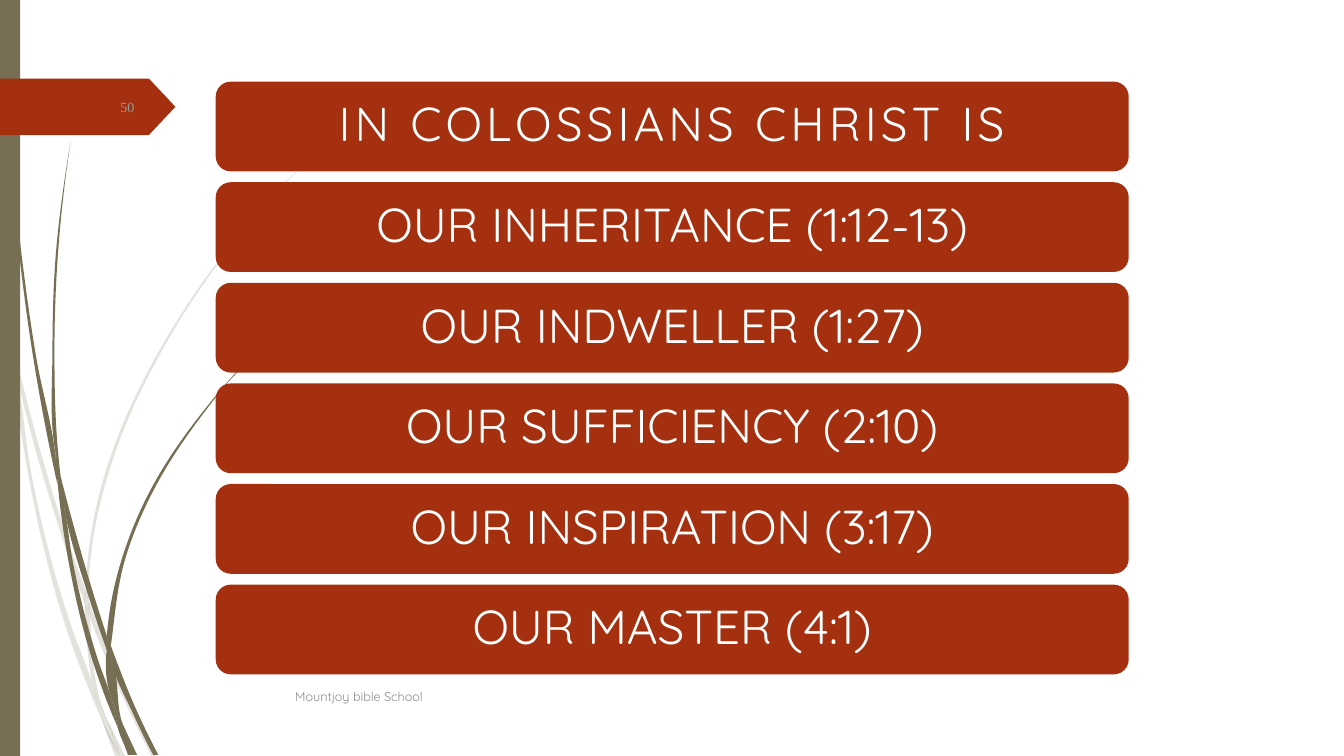
from dataclasses import dataclass

from lxml import etree
from pptx import Presentation
from pptx.dml.color import RGBColor
from pptx.enum.shapes import MSO_SHAPE as Preset
from pptx.enum.text import MSO_ANCHOR as Anchor, PP_ALIGN as Align
from pptx.oxml.ns import qn
from pptx.shapes.autoshape import Shape
from pptx.slide import Slide
from pptx.util import Inches, Pt

# Grid: 1333 columns by 750 rows of square cells
CELL = Inches(0.01)
COLUMNS, ROWS = 1333, 750

OLIVE = RGBColor(0x76, 0x6F, 0x54)
RUST = RGBColor(0xA5, 0x30, 0x10)
WHITE = RGBColor(0xFF, 0xFF, 0xFF)
FOOTER_GREY = RGBColor(0x8C, 0x8C, 0x8C)
NUMBER_GREY = RGBColor(0x9B, 0x9A, 0x98)

Point = tuple[float, float]  # column, row
Box = tuple[float, float, float, float]  # column, row, columns wide, rows high


@dataclass(frozen=True)
class Blade:
    """A piece of grass between two edges, each listed from top to bottom."""
    left: list[Point]
    right: list[Point]


@dataclass(frozen=True)
class Caption:
    text: str
    box: Box
    size: float
    color: RGBColor
    font: str = "Quicksand"
    align: Align = Align.LEFT
    spacing: float = 0
    line_spacing: float = 1


# Grass
PALE_BLADES = [
    Blade([(0, 299), (11, 350)], [(0, 282), (9, 322), (11, 350)]),
    Blade([(17, 376), (36, 449), (58, 522), (84, 599)],
          [(14, 345), (36, 433), (62, 520), (85, 586)]),
    Blade([(88, 610), (123, 694), (150, 750)],
          [(88, 596), (92, 607), (127, 692), (155, 750)]),
    Blade([(105, 711), (119, 750)], [(105, 711), (124, 750)]),
    Blade([(11, 350), (28, 470), (44, 546), (65, 621), (92, 693), (101, 714)],
          [(11, 350), (17, 376), (31, 469), (48, 545), (70, 619), (93, 683),
           (99, 707), (101, 714)]),
    Blade([(84, 599), (87, 646), (93, 683), (96, 692), (105, 711)],
          [(84, 599), (88, 610), (91, 646), (103, 706), (105, 711)]),
    Blade([(312, 153), (289, 175), (268, 197), (228, 244), (158, 348), (107, 461),
           (85, 586)],
          [(312, 154), (290, 175), (268, 198), (229, 245), (160, 349), (110, 462),
           (88, 584), (88, 596)]),
    Blade([(101, 714), (114, 750)], [(101, 714), (119, 750)]),
    Blade([(85, 586), (84, 599), (88, 610)], [(85, 586), (88, 596), (88, 610)]),
    Blade([(93, 683), (99, 707), (101, 714), (119, 750)],
          [(93, 683), (96, 692), (105, 711), (119, 750)]),
]
DARK_BLADES = [
    Blade([(3, 0), (3, 48), (7, 110), (17, 233), (33, 355), (57, 481)],
          [(3, 0), (5, 48), (8, 109), (19, 232), (36, 355), (55, 453), (57, 481)]),
    Blade([(60, 472), (64, 505), (88, 592), (106, 645)],
          [(60, 472), (93, 590), (106, 631)]),
    Blade([(110, 641), (111, 656), (132, 708), (152, 749)],
          [(110, 641), (113, 649), (136, 706), (157, 749)]),
    Blade([(57, 477), (68, 557), (93, 659), (111, 708), (117, 722)],
          [(57, 477), (64, 505), (72, 556), (98, 657), (110, 691), (116, 717),
           (117, 722)]),
    Blade([(70, 141), (62, 193), (56, 245), (52, 349), (55, 449), (60, 472)],
          [(70, 141), (63, 193), (58, 245), (54, 349), (58, 453), (60, 472)]),
    Blade([(122, 719), (133, 749)], [(122, 719), (136, 749)]),
    Blade([(55, 449), (55, 453), (57, 477), (64, 505)],
          [(55, 449), (60, 472), (64, 505)]),
    Blade([(260, 344), (245, 358), (231, 373), (204, 405), (156, 474), (122, 551),
           (106, 631)],
          [(260, 344), (246, 359), (231, 374), (205, 406), (158, 476), (125, 552),
           (111, 633), (110, 641)]),
    Blade([(117, 722), (127, 749)], [(117, 722), (131, 749)]),
    Blade([(106, 645), (110, 691), (116, 706), (122, 719)],
          [(106, 645), (111, 656), (121, 716), (122, 719)]),
    Blade([(106, 631), (106, 645), (111, 656)], [(106, 631), (110, 641), (111, 656)]),
    Blade([(110, 691), (116, 717), (117, 722), (130, 749)],
          [(110, 691), (116, 706), (122, 719), (133, 749)]),
]

# Banner stack
HEADING = "IN COLOSSIANS CHRIST IS"
BANNERS = [HEADING, "OUR INHERITANCE (1:12-13)", "OUR INDWELLER (1:27)",
           "OUR SUFFICIENCY (2:10)", "OUR INSPIRATION (3:17)", "OUR MASTER (4:1)"]
BANNER_LEFT, BANNER_TOP, BANNER_WIDTH, BANNER_HEIGHT = 214, 81, 905.5, 89
BANNER_PITCH, BANNER_MARGIN = 99.8, 4.4

CAPTIONS = [
    Caption("Mountjoy bible School", (283, 671, 833, 40), 9, FOOTER_GREY),
    Caption("50", (58, 86, 85, 40), 10, NUMBER_GREY, "Times New Roman", Align.RIGHT),
]


def cells(lengths: tuple[float, ...]) -> list[int]:
    return [round(length * CELL) for length in lengths]


def paint(shape: Shape, color: RGBColor, opacity: int = 100) -> None:
    shape.shadow.inherit = False
    shape.fill.solid()
    shape.fill.fore_color.rgb = color
    shape.line.fill.background()
    if opacity < 100:
        color_element = shape._element.spPr.find(f".//{qn('a:srgbClr')}")
        etree.SubElement(color_element, qn("a:alpha")).set("val", str(opacity * 1000))


def add_preset(slide: Slide, preset: Preset, box: Box, color: RGBColor) -> Shape:
    shape = slide.shapes.add_shape(preset, *cells(box))
    paint(shape, color)
    return shape


def curve_points(edge: list[Point]) -> list[Point]:
    """Smooth edge as Bezier points: anchor, handle, handle, anchor and so on."""
    heights = [end[1] - start[1] for start, end in zip(edge, edge[1:])]
    chords = [(end[0] - start[0]) / height
              for start, end, height in zip(edge, edge[1:], heights)]
    inner = [(chords[i] * heights[i + 1] + chords[i + 1] * heights[i])
             / (heights[i] + heights[i + 1]) for i in range(len(chords) - 1)]
    ends = (inner[0], inner[-1]) if inner else (chords[0], chords[0])
    slopes = [2 * chords[0] - ends[0], *inner, 2 * chords[-1] - ends[1]]
    points = [edge[0]]
    for i, (start, end) in enumerate(zip(edge, edge[1:])):
        third = heights[i] / 3
        points += [(start[0] + slopes[i] * third, start[1] + third),
                   (end[0] - slopes[i + 1] * third, end[1] - third), end]
    return points


def add_blade(slide: Slide, blade: Blade, opacity: int) -> None:
    down, up = curve_points(blade.left), curve_points(blade.right)[::-1]
    foot = [] if down[-1] == up[0] else [down[-1], up[0], up[0]]
    start, *rest = [cells(point) for point in down + foot + up[1:]]
    builder = slide.shapes.build_freeform(*start)
    builder.add_line_segments(rest, close=True)
    shape = builder.convert_to_shape()
    # Every three straight segments become one Bezier segment
    outline = shape._element.spPr.find(f".//{qn('a:path')}")
    lines = outline.findall(qn("a:lnTo"))
    for first in range(0, len(lines), 3):
        cubic = etree.Element(qn("a:cubicBezTo"))
        lines[first].addprevious(cubic)
        for line in lines[first:first + 3]:
            cubic.append(line[0])
            outline.remove(line)
    paint(shape, OLIVE, opacity)


def add_caption(slide: Slide, caption: Caption) -> None:
    frame = slide.shapes.add_textbox(*cells(caption.box)).text_frame
    frame.word_wrap = True
    frame.vertical_anchor = Anchor.MIDDLE
    paragraph = frame.paragraphs[0]
    paragraph.alignment = caption.align
    paragraph.line_spacing = caption.line_spacing
    run = paragraph.add_run()
    run.text = caption.text
    run.font.name = caption.font
    run.font.size = Pt(caption.size)
    run.font.color.rgb = caption.color
    if caption.spacing:
        run._r.get_or_add_rPr().set("spc", str(round(caption.spacing * 100)))


def add_banner(slide: Slide, index: int, text: str) -> None:
    top = BANNER_TOP + index * BANNER_PITCH
    add_preset(slide, Preset.ROUNDED_RECTANGLE,
               (BANNER_LEFT, top, BANNER_WIDTH, BANNER_HEIGHT), RUST)
    box = (BANNER_LEFT + BANNER_MARGIN, top + BANNER_MARGIN,
           BANNER_WIDTH - 2 * BANNER_MARGIN, BANNER_HEIGHT - 2 * BANNER_MARGIN)
    add_caption(slide, Caption(text, box, 34, WHITE, align=Align.CENTER,
                               spacing=3 if text == HEADING else 0, line_spacing=0.9))


def main() -> None:
    presentation = Presentation()
    presentation.slide_width = COLUMNS * CELL
    presentation.slide_height = ROWS * CELL
    slide = presentation.slides.add_slide(presentation.slide_layouts[6])
    for blades, opacity in ((PALE_BLADES, 20), (DARK_BLADES, 100)):
        for blade in blades:
            add_blade(slide, blade, opacity)
    add_preset(slide, Preset.RECTANGLE, (0, 0, 20, ROWS), OLIVE)
    number_tag = add_preset(slide, Preset.PENTAGON, (0, 78, 174, 56), RUST)
    number_tag.adjustments[0] = 0.47
    for index, text in enumerate(BANNERS):
        add_banner(slide, index, text)
    for caption in CAPTIONS:
        add_caption(slide, caption)
    presentation.save("out.pptx")


if __name__ == "__main__":
    main()
